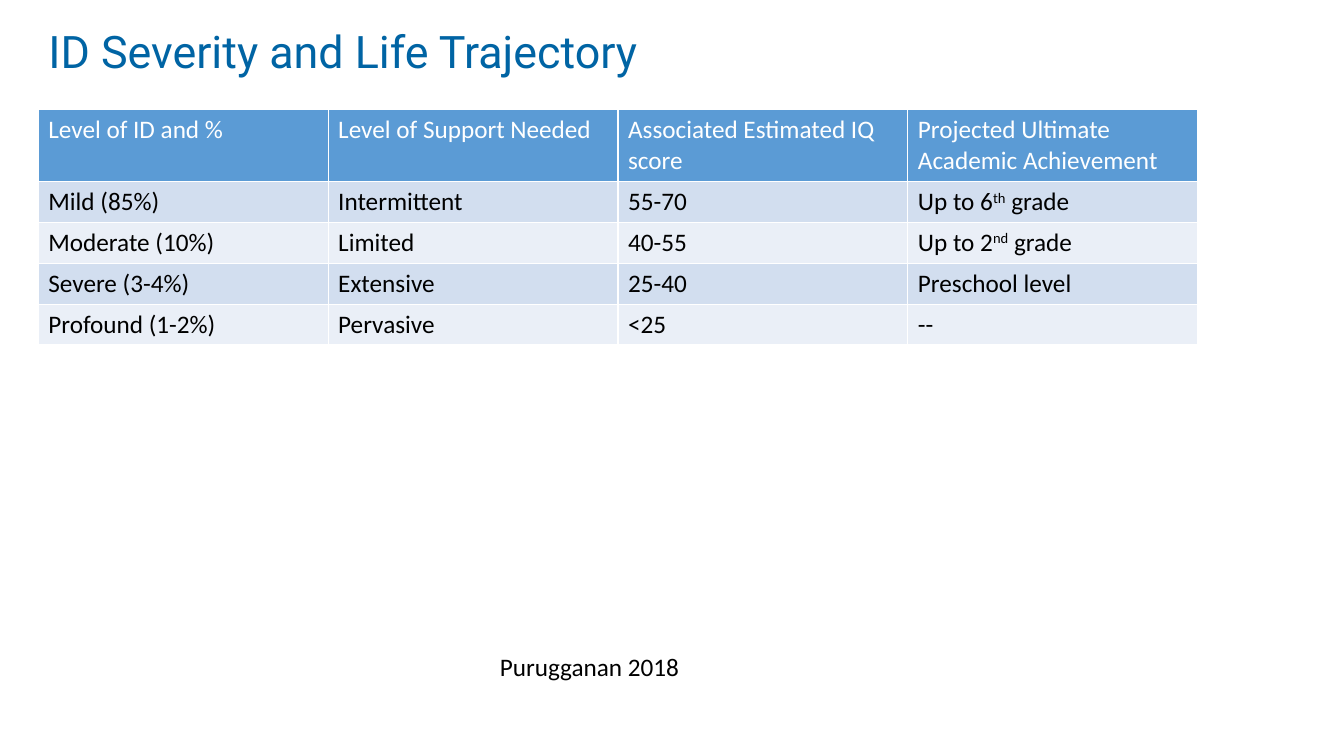
from dataclasses import dataclass

from pptx import Presentation
from pptx.dml.color import RGBColor
from pptx.enum.text import MSO_ANCHOR, MSO_AUTO_SIZE, PP_ALIGN
from pptx.util import Inches, Pt


@dataclass(frozen=True)
class Theme:
    title_font: str = "Roboto"
    body_font: str = "Calibri"
    title_size: int = 32
    body_size: int = 18
    title: str = "0064A4"
    header: str = "5B9BD5"
    bands: tuple = ("D2DEEF", "EAEFF7")
    light: str = "FFFFFF"
    dark: str = "000000"


theme = Theme()


def format_paragraph(para, name, size, color):
    for span in para.runs:
        span.font.name = name
        span.font.size = Pt(size)
        span.font.bold = False
        span.font.color.rgb = RGBColor.from_string(color)


deck = Presentation()
deck.slide_width, deck.slide_height = Inches(13.33), Inches(7.5)
page = deck.slides.add_slide(deck.slide_layouts[5])

# Title
title = page.shapes.title
title.left, title.top = Inches(0.38), Inches(0.19)
title.width, title.height = Inches(11.5), Inches(0.7)
title.text_frame.text = "ID Severity and Life Trajectory"
title.text_frame.auto_size = MSO_AUTO_SIZE.NONE
title.text_frame.vertical_anchor = MSO_ANCHOR.MIDDLE
para = title.text_frame.paragraphs[0]
para.alignment = PP_ALIGN.LEFT
para.line_spacing = 0.9
format_paragraph(para, theme.title_font, theme.title_size, theme.title)

# Severity table: a tuple holds text, superscript, text
severity_rows = [
    ["Level of ID and %", "Level of Support Needed",
     "Associated Estimated IQ score", "Projected Ultimate Academic Achievement"],
    ["Mild (85%)", "Intermittent", "55-70", ("Up to 6", "th", " grade")],
    ["Moderate (10%)", "Limited", "40-55", ("Up to 2", "nd", " grade")],
    ["Severe (3-4%)", "Extensive", "25-40", "Preschool level"],
    ["Profound (1-2%)", "Pervasive", "<25", "--"],
]
table = page.shapes.add_table(
    len(severity_rows), len(severity_rows[0]),
    Inches(0.38), Inches(1.09), Inches(11.5), Inches(2.31)).table
for row_index, values in enumerate(severity_rows):
    is_header = row_index == 0
    table.rows[row_index].height = Inches(0.71 if is_header else 0.4)
    fill = theme.header if is_header else theme.bands[(row_index - 1) % 2]
    for column_index, value in enumerate(values):
        cell = table.cell(row_index, column_index)
        cell.fill.solid()
        cell.fill.fore_color.rgb = RGBColor.from_string(fill)
        para = cell.text_frame.paragraphs[0]
        parts = (value,) if isinstance(value, str) else value
        for part_index, part in enumerate(parts):
            span = para.add_run()
            span.text = part
            if part_index == 1:
                span.font._element.set("baseline", "30000")
        format_paragraph(para, theme.body_font, theme.body_size,
                         theme.light if is_header else theme.dark)

# Source credit
box = page.shapes.add_textbox(Inches(4.86), Inches(6.41), Inches(2), Inches(0.4))
box.text_frame.text = "Purugganan 2018"
box.text_frame.word_wrap = False
box.text_frame.auto_size = MSO_AUTO_SIZE.SHAPE_TO_FIT_TEXT
format_paragraph(box.text_frame.paragraphs[0], theme.body_font, theme.body_size, theme.dark)

deck.save("out.pptx")
